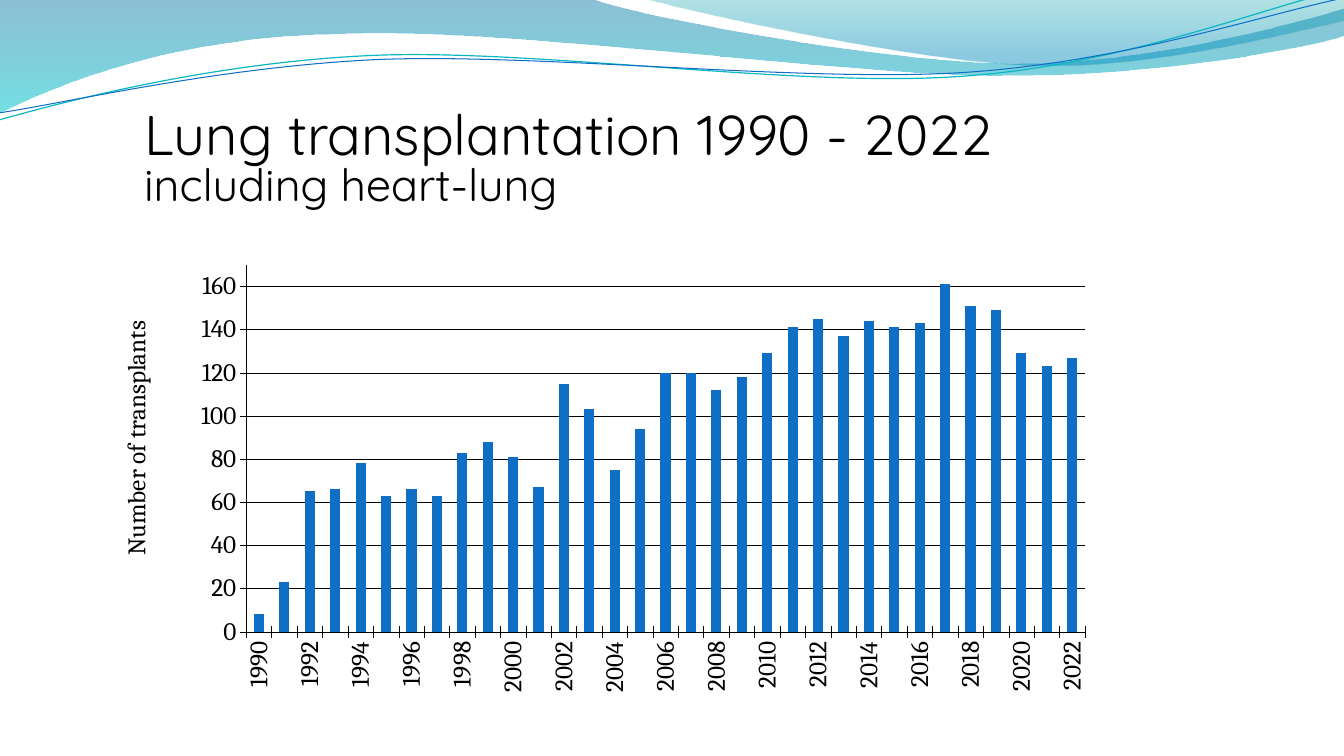
from dataclasses import dataclass

from lxml import etree
from pptx import Presentation
from pptx.chart.data import CategoryChartData
from pptx.dml.color import RGBColor
from pptx.enum.chart import XL_CHART_TYPE, XL_TICK_MARK
from pptx.enum.text import MSO_ANCHOR, MSO_AUTO_SIZE, PP_ALIGN
from pptx.oxml import parse_xml
from pptx.oxml.ns import nsdecls, qn
from pptx.util import Inches, Pt

COLUMN_STACKED = XL_CHART_TYPE.COLUMN_STACKED
CROSS, NO_TICK = XL_TICK_MARK.CROSS, XL_TICK_MARK.NONE
TOP, LEFT = MSO_ANCHOR.TOP, PP_ALIGN.LEFT
NO_AUTOFIT = MSO_AUTO_SIZE.NONE


@dataclass(frozen=True)
class Theme:
    ink: RGBColor = RGBColor(0, 0, 0)
    blue: RGBColor = RGBColor(0x0F, 0x6F, 0xC6)
    teal: RGBColor = RGBColor(0x0A, 0xB8, 0xBF)
    title_font: str = "Quicksand"
    chart_font: str = "Cambria"
    title_size: Pt = Pt(40)
    subtitle_size: Pt = Pt(32)
    chart_size: Pt = Pt(18)
    axis_width: Pt = Pt(0.25)


THEME = Theme()
UPRIGHT = "-5400000"

BANDS = [
    ([(0, 0), [(5.87, -0.01)],
      [(6.34, 0.17), (8.84, 0.63), (10.11, 0.63)],
      [(11.37, 0.63), (12.77, 0.26), (13.33, 0.09)],
      [(13.34, 0.36)],
      [(13.11, 0.44), (11.59, 0.76), (9.94, 0.75)],
      [(8.29, 0.75), (5.09, 0.28), (3.43, 0.34)],
      [(1.72, 0.36), (0.61, 0.83), (-0.02, 1.13)]],
     [(0, "0074A1", 45), (100, "00C6CF", 55)]),
    ([(6.38, -0.01),
      [(6.79, 0.11), (9.09, 0.62), (10.25, 0.65)],
      [(11.4, 0.69), (12.82, 0.32), (13.33, 0.21)],
      [(13.33, 0)]],
     [(0, "00A1A9", 30), (80, "008BBF", 45)]),
]
STRANDS = [
    ([(-0.01, 1.19),
      [(0.63, 1.01), (2.1, 0.62), (3.69, 0.55)],
      [(5.27, 0.48), (7.89, 0.87), (9.49, 0.76)],
      [(11.1, 0.66), (12.51, 0.08), (13.3, -0.1)]],
     THEME.teal, Pt(0.85)),
    ([(-0.01, 1.12),
      [(0.62, 1.03), (2.18, 0.66), (3.77, 0.59)],
      [(5.37, 0.53), (7.96, 0.82), (9.55, 0.72)],
      [(11.14, 0.62), (12.55, 0.14), (13.33, -0.02)]],
     THEME.blue, Pt(0.75)),
]

FIRST_YEAR = 1990
TRANSPLANTS = [
    8, 23, 65, 66, 78, 63, 66, 63, 83, 88, 81,
    67, 115, 103, 75, 94, 120, 120, 112, 118, 129, 141,
    145, 137, 144, 141, 143, 161, 151, 149, 129, 123, 127,
]


def add_outline(s, outline, left, top, close):
    start, *segments = outline
    points = [start] + [point for segment in segments for point in segment]
    emu = [(left + Inches(x), top + Inches(y)) for x, y in points]
    builder = s.shapes.build_freeform(*emu[0])
    builder.add_line_segments(emu[1:], close=close)
    sp = builder.convert_to_shape()
    sp.shadow.inherit = False
    steps = iter(sp.element.xpath(".//a:path/a:lnTo"))
    for segment in segments:
        group = [next(steps) for _ in segment]
        if len(group) == 3:
            curve = etree.Element(qn("a:cubicBezTo"))
            group[0].addprevious(curve)
            for step in group:
                curve.append(step[0])
                step.getparent().remove(step)
    return sp


def gradient_fill(sp, stops):
    sp.line.fill.background()
    sp.fill.background()
    marks = "".join(
        f'<a:gs pos="{pos * 1000}"><a:srgbClr val="{color}">'
        f'<a:alpha val="{alpha * 1000}"/></a:srgbClr></a:gs>'
        for pos, color, alpha in stops)
    no_fill = sp.element.spPr.find(qn("a:noFill"))
    no_fill.getparent().replace(no_fill, parse_xml(
        f'<a:gradFill {nsdecls("a")} rotWithShape="1"><a:gsLst>{marks}</a:gsLst>'
        '<a:lin ang="5400000" scaled="0"/></a:gradFill>'))


def add_waves(s, left, top):
    for outline, stops in BANDS:
        gradient_fill(add_outline(s, outline, left, top, True), stops)
    for outline, color, width in STRANDS:
        sp = add_outline(s, outline, left, top, False)
        sp.fill.background()
        sp.line.color.rgb = color
        sp.line.width = width


def fill_title(s, left, top, width, height):
    title = s.shapes.title
    title.left, title.top, title.width, title.height = left, top, width, height
    title.element.getparent().append(title.element)
    tf = title.text_frame
    tf.word_wrap = True
    tf.auto_size = NO_AUTOFIT
    tf.vertical_anchor = TOP
    p = tf.paragraphs[0]
    p.alignment = LEFT
    p.line_spacing = 0.8
    p.font.name = THEME.title_font
    p.font.color.rgb = THEME.ink
    r = p.add_run()
    r.text = "Lung transplantation 1990 - 2022"
    r.font.size = THEME.title_size
    p.add_line_break()
    r = p.add_run()
    r.text = "including heart-lung"
    r.font.size = THEME.subtitle_size


def set_font(font):
    font.name = THEME.chart_font
    font.size = THEME.chart_size
    font.bold = False
    font.color.rgb = THEME.ink


def set_line(line):
    line.color.rgb = THEME.ink
    line.width = THEME.axis_width


def set_layout(parent, index, **values):
    for old in parent.findall(qn("c:layout")):
        parent.remove(old)
    layout = etree.Element(qn("c:layout"))
    manual = etree.SubElement(layout, qn("c:manualLayout"))
    for name, value in values.items():
        etree.SubElement(manual, qn(f"c:{name}")).set("val", str(value))
    parent.insert(index, layout)


def add_transplant_chart(s, left, top, width, height):
    data = CategoryChartData()
    data.categories = [str(FIRST_YEAR + i) for i in range(len(TRANSPLANTS))]
    data.add_series("Series 1", TRANSPLANTS)
    chart = s.shapes.add_chart(COLUMN_STACKED, left, top, width, height, data).chart
    chart.has_legend = False
    chart.has_title = False
    set_font(chart.font)

    plot = chart.plots[0]
    plot.vary_by_categories = False
    plot.gap_width = 150
    plot.overlap = 100
    fill = plot.series[0].format.fill
    fill.solid()
    fill.fore_color.rgb = THEME.blue

    years, counts = chart.category_axis, chart.value_axis
    for axis in (years, counts):
        axis.major_tick_mark = CROSS
        axis.minor_tick_mark = NO_TICK
        set_line(axis.format.line)
        set_font(axis.tick_labels.font)
    years.has_major_gridlines = False
    counts.minimum_scale, counts.maximum_scale, counts.major_unit = 0, 170, 20
    counts.has_major_gridlines = True
    set_line(counts.major_gridlines.format.line)
    p = counts.axis_title.text_frame.paragraphs[0]
    p.text = "Number of transplants"
    set_font(p.font)

    xml = chart.element
    for body in xml.xpath(".//c:catAx/c:txPr/a:bodyPr | .//c:valAx/c:title//a:bodyPr"):
        body.set("rot", UPRIGHT)
        body.set("vert", "horz")
    offset = xml.xpath(".//c:catAx/c:lblOffset")[0]
    for name, step in (("tickMarkSkip", "1"), ("tickLblSkip", "2")):
        skip = etree.Element(qn(f"c:{name}"))
        skip.set("val", step)
        offset.addnext(skip)
    set_layout(xml.xpath(".//c:plotArea")[0], 0, layoutTarget="inner",
               xMode="edge", yMode="edge", x=0.142, y=0.083, w=0.771, h=0.76)
    set_layout(xml.xpath(".//c:valAx/c:title")[0], 1,
               xMode="edge", yMode="edge", x=0.021, y=0.19)


def main():
    prs = Presentation()
    prs.slide_width, prs.slide_height = Inches(13.33), Inches(7.5)
    s = prs.slides.add_slide(prs.slide_layouts[5])
    add_waves(s, 0, 0)
    fill_title(s, Inches(1.33), Inches(1.07), Inches(10.06), Inches(1.25))
    add_transplant_chart(s, Inches(0.91), Inches(2.23), Inches(10.79), Inches(4.79))
    prs.save("out.pptx")


if __name__ == "__main__":
    main()
